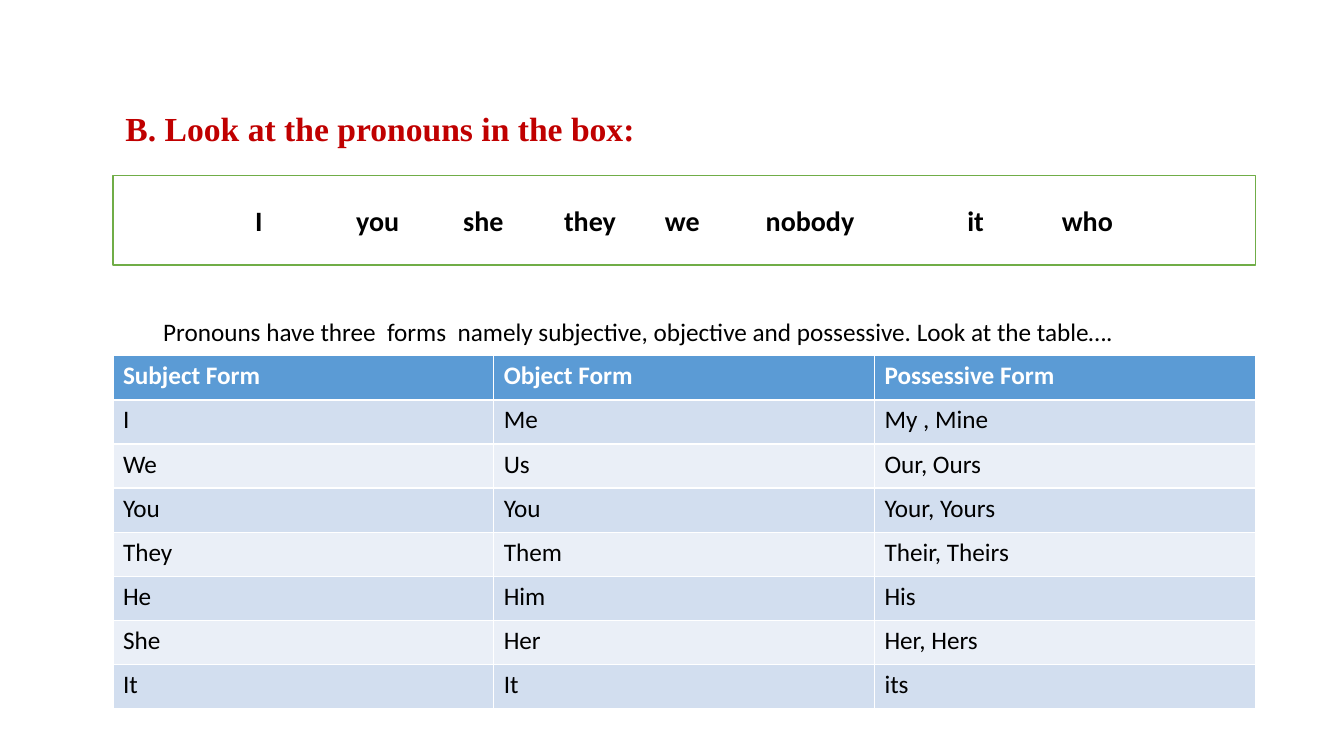
from dataclasses import dataclass

from pptx import Presentation
from pptx.dml.color import RGBColor
from pptx.enum.shapes import MSO_SHAPE
from pptx.enum.text import MSO_ANCHOR, MSO_AUTO_SIZE, PP_ALIGN
from pptx.slide import Slide
from pptx.text.text import TextFrame
from pptx.util import Inches, Pt

RECT = MSO_SHAPE.RECTANGLE
MIDDLE = MSO_ANCHOR.MIDDLE
FIT_SHAPE = MSO_AUTO_SIZE.SHAPE_TO_FIT_TEXT
LEFT, CENTER = PP_ALIGN.LEFT, PP_ALIGN.CENTER

COLORS = {
    "title": "C00000",
    "text": "000000",
    "white": "FFFFFF",
    "box_line": "70AD47",
    "header": "5B9BD5",
    "odd_row": "D2DEEF",
    "even_row": "EAEFF7",
}

MARGIN, CONTENT_WIDTH = 1.12, 11.33
TAB_STEP = 1

PRONOUN_FORMS = [
    ("Subject Form", "Object Form", "Possessive Form"),
    ("I", "Me", "My , Mine"),
    ("We", "Us", "Our, Ours"),
    ("You", "You", "Your, Yours"),
    ("They", "Them", "Their, Theirs"),
    ("He", "Him", "His"),
    ("She", "Her", "Her, Hers"),
    ("It", "It", "its"),
]


@dataclass
class TextStyle:
    size: float
    color: str = "text"
    bold: bool = False
    name: str = "Calibri"
    align: PP_ALIGN = LEFT


TITLE = TextStyle(24, "title", True, "Times New Roman", CENTER)
PRONOUNS = TextStyle(20, bold=True, align=CENTER)
BODY = TextStyle(18)
HEADER = TextStyle(18, "white", True)


def rgb(key: str) -> RGBColor:
    return RGBColor.from_string(COLORS[key])


def write(tf: TextFrame, text: str, style: TextStyle) -> None:
    p = tf.paragraphs[0]
    p.alignment = style.align
    r = p.add_run()
    r.text = text
    font_values = {"size": Pt(style.size), "bold": style.bold, "name": style.name}
    for attr, value in font_values.items():
        setattr(r.font, attr, value)
    r.font.color.rgb = rgb(style.color)


def add_title(s: Slide) -> None:
    title = s.shapes.title
    box = {"left": MARGIN, "top": 1.02, "width": 5.3, "height": 0.5}
    for attr, value in box.items():
        setattr(title, attr, Inches(value))
    tf = title.text_frame
    tf.word_wrap = False
    tf.auto_size = FIT_SHAPE
    write(tf, "B. Look at the pronouns in the box:", TITLE)


def add_pronoun_box(s: Slide) -> None:
    box = s.shapes.add_shape(
        RECT, Inches(MARGIN), Inches(1.74), Inches(CONTENT_WIDTH), Inches(0.89)
    )
    box.shadow.inherit = False
    box.fill.solid()
    box.fill.fore_color.rgb = rgb("white")
    box.line.color.rgb = rgb("box_line")
    box.line.width = Pt(1)
    tf = box.text_frame
    tf.vertical_anchor = MIDDLE
    write(tf, "I \tyou\t she\t they\t we\t nobody\t\t it \twho", PRONOUNS)
    tf.paragraphs[0]._p.get_or_add_pPr().set("defTabSz", str(Inches(TAB_STEP)))


def add_forms_table(s: Slide) -> None:
    table = s.shapes.add_table(
        len(PRONOUN_FORMS), len(PRONOUN_FORMS[0]),
        Inches(MARGIN), Inches(3.53), Inches(CONTENT_WIDTH), Inches(3.5),
    ).table
    for i, forms in enumerate(PRONOUN_FORMS):
        style = BODY if i else HEADER
        fill = ("odd_row" if i % 2 else "even_row") if i else "header"
        for j, form in enumerate(forms):
            cell = table.cell(i, j)
            cell.fill.solid()
            cell.fill.fore_color.rgb = rgb(fill)
            write(cell.text_frame, form, style)


def add_explanation(s: Slide) -> None:
    box = s.shapes.add_textbox(Inches(1.52), Inches(3.09), Inches(9.74), Inches(0.4))
    tf = box.text_frame
    tf.word_wrap = False
    tf.auto_size = FIT_SHAPE
    write(
        tf,
        "Pronouns have three  forms  namely subjective, objective and possessive. "
        "Look at the table….",
        BODY,
    )


def main() -> None:
    prs = Presentation()
    prs.slide_width, prs.slide_height = Inches(13.33), Inches(7.5)
    s = prs.slides.add_slide(prs.slide_layouts[5])
    add_title(s)
    add_pronoun_box(s)
    add_forms_table(s)
    add_explanation(s)
    prs.save("out.pptx")


if __name__ == "__main__":
    main()
